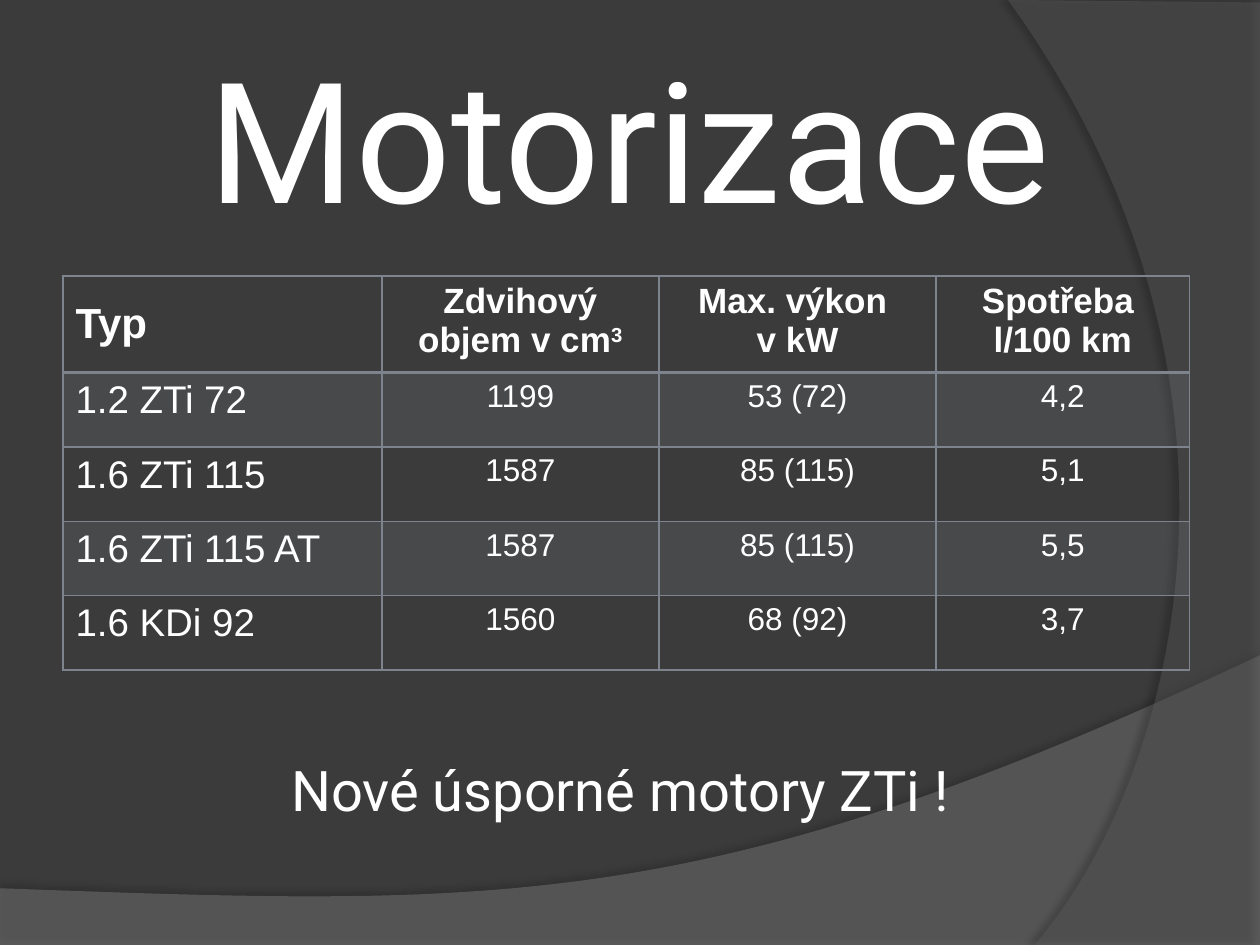
from lxml import etree
from pptx import Presentation
from pptx.dml.color import RGBColor
from pptx.enum.text import MSO_ANCHOR, PP_ALIGN
from pptx.oxml.ns import qn
from pptx.util import Inches, Pt

LEFT, CENTER = PP_ALIGN.LEFT, PP_ALIGN.CENTER
TOP, MIDDLE = MSO_ANCHOR.TOP, MSO_ANCHOR.MIDDLE

COLORS = {
    "back": "3B3B3B", "wave": "7F7F7F", "arc": "5E5E5E",
    "grid": "7E848D", "text": "FFFFFF", "shade": "000000",
}
HEADS = ["Typ", "Zdvihový objem v cm3", "Max. výkon \nv kW", "Spotřeba \nl/100 km"]
ENGINES = [
    ["1.2 ZTi 72", "1199", "53 (72)", "4,2"],
    ["1.6 ZTi 115", "1587", "85 (115)", "5,1"],
    ["1.6 ZTi 115 AT", "1587", "85 (115)", "5,5"],
    ["1.6 KDi 92", "1560", "68 (92)", "3,7"],
]
COLS = [2.53, 2.2, 2.2, 2.01]
ROWS = [0.71] + [0.59] * len(ENGINES)


def node(parent, tag, **attrs):
    child = etree.SubElement(parent, qn(tag))
    for name, value in attrs.items():
        child.set(name, str(value))
    return child


def curve(start, ctrl1, ctrl2, end, steps=48):
    """Return points along a cubic Bezier curve, without its start."""
    points = []
    for step in range(1, steps + 1):
        t = step / steps
        u = 1 - t
        weights = (u ** 3, 3 * u * u * t, 3 * u * t * t, t ** 3)
        points.append(tuple(
            sum(w * v for w, v in zip(weights, axis))
            for axis in zip(start, ctrl1, ctrl2, end)))
    return points


class Deck:
    def __init__(self, width, height):
        self.prs = Presentation()
        self.prs.slide_width = Inches(width)
        self.prs.slide_height = Inches(height)
        self.slide = self.prs.slides.add_slide(self.prs.slide_layouts[6])
        self.paint(self.slide.background.fill, "back")

    def paint(self, fill, color, alpha=100):
        fill.solid()
        fill.fore_color.rgb = RGBColor.from_string(COLORS[color])
        if alpha < 100:
            tint = fill._xPr.find(qn("a:solidFill"))[0]
            node(tint, "a:alpha", val=alpha * 1000)

    def label(self, frame, text, size, font, align=CENTER, bold=False):
        frame.text = text
        for par in frame.paragraphs:
            par.alignment = align
            for run in par.runs:
                run.font.size = Pt(size)
                run.font.name = font
                run.font.bold = bold
                run.font.color.rgb = RGBColor.from_string(COLORS["text"])

    def text(self, box, text, size, anchor=TOP, inset=None):
        frame = self.slide.shapes.add_textbox(*map(Inches, box)).text_frame
        frame.word_wrap = True
        frame.vertical_anchor = anchor
        if inset is not None:
            frame.margin_left = frame.margin_right = Inches(inset)
            frame.margin_top = frame.margin_bottom = Inches(inset)
        self.label(frame, text, size, "Roboto")

    def sweep(self, points, color, alpha, shade, dist, angle):
        """Draw a translucent outline with a soft shadow."""
        first, *rest = [tuple(map(Inches, point)) for point in points]
        pen = self.slide.shapes.build_freeform(*first)
        pen.add_line_segments(rest, close=True)
        shape = pen.convert_to_shape()
        self.paint(shape.fill, color, alpha)
        shape.line.fill.background()
        shape.shadow.inherit = False
        effects = shape._element.spPr.find(qn("a:effectLst"))
        outer = node(effects, "a:outerShdw", blurRad=Pt(4), dist=Pt(dist),
                     dir=angle * 60000, algn="ctr", rotWithShape=0)
        tint = node(outer, "a:srgbClr", val=COLORS["shade"])
        node(tint, "a:alpha", val=shade * 1000)

    def border(self, cell, **widths):
        props = cell._tc.get_or_add_tcPr()
        for side in "LRTB":
            line = node(props, "a:ln" + side, w=Pt(widths.get(side, 1)))
            node(node(line, "a:solidFill"), "a:srgbClr", val=COLORS["grid"])

    def table(self, left, top, data):
        table = self.slide.shapes.add_table(
            len(ROWS), len(COLS), Inches(left), Inches(top),
            Inches(sum(COLS)), Inches(sum(ROWS))).table
        table.first_row = table.horz_banding = False
        for col, width in zip(table.columns, COLS):
            col.width = Inches(width)
        for r, (row, height) in enumerate(zip(data, ROWS)):
            table.rows[r].height = Inches(height)
            head = r == 0
            for c, text in enumerate(row):
                cell = table.cell(r, c)
                size = (24 if head else 22) if c == 0 else (20 if head else 18)
                self.label(cell.text_frame, text, size, "Arial",
                           CENTER if c else LEFT, head)
                self.border(cell, T=2 if r == 1 else 1, B=2 if head else 1)
                if r % 2:
                    self.paint(cell.fill, "grid", 20)
                else:
                    cell.fill.background()
        return table

    def power(self, cell):
        """Raise the last character of a cell to superscript."""
        par = cell.text_frame.paragraphs[0]
        run = par.runs[0]
        body, mark = run.text[:-1], run.text[-1]
        run.text = body
        extra = par.add_run()
        extra.text = mark
        extra.font.size, extra.font.name = run.font.size, run.font.name
        extra.font.bold = run.font.bold
        extra.font.color.rgb = run.font.color.rgb
        extra._r.get_or_add_rPr().set("baseline", "30000")


def main():
    deck = Deck(10, 7.5)
    wave = [(0, 7.05), (0, 7.51), (10, 7.51), (10, 5.2)]
    wave += curve((10, 5.2), (5.59, 7.29), (3.91, 7.19), (0, 7.05))
    deck.sweep(wave, "wave", 45, 35, 3.5, 270)
    arc = [(10, 0.02), (10, 7.5), (8.21, 7.5)]
    arc += curve((8.21, 7.5), (9.35, 6.19), (10.18, 3), (8, 0))
    deck.sweep(arc, "arc", 40, 45, 4, 180)

    deck.text((0.5, 0.3, 8.99, 1.56), "Motorizace", 96, MIDDLE, 0.05)
    table = deck.table(0.5, 2.19, [HEADS] + ENGINES)
    deck.power(table.cell(0, 1))
    kind = table.cell(0, 0)
    kind.vertical_anchor = MIDDLE
    par = kind.text_frame.paragraphs[0]
    par.space_before = par.space_after = Pt(6)
    deck.text((1.46, 5.95, 6.93, 0.64), "Nové úsporné motory ZTi !", 32)
    deck.prs.save("out.pptx")


if __name__ == "__main__":
    main()
